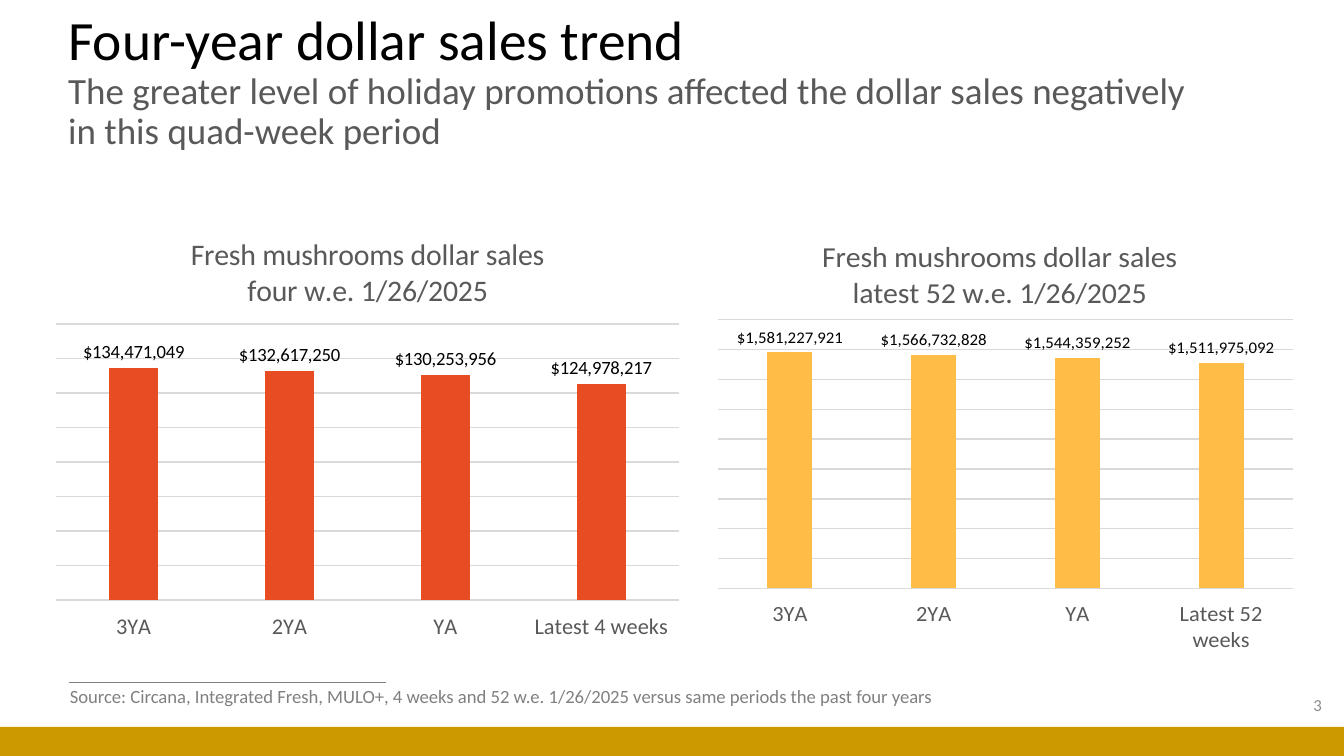
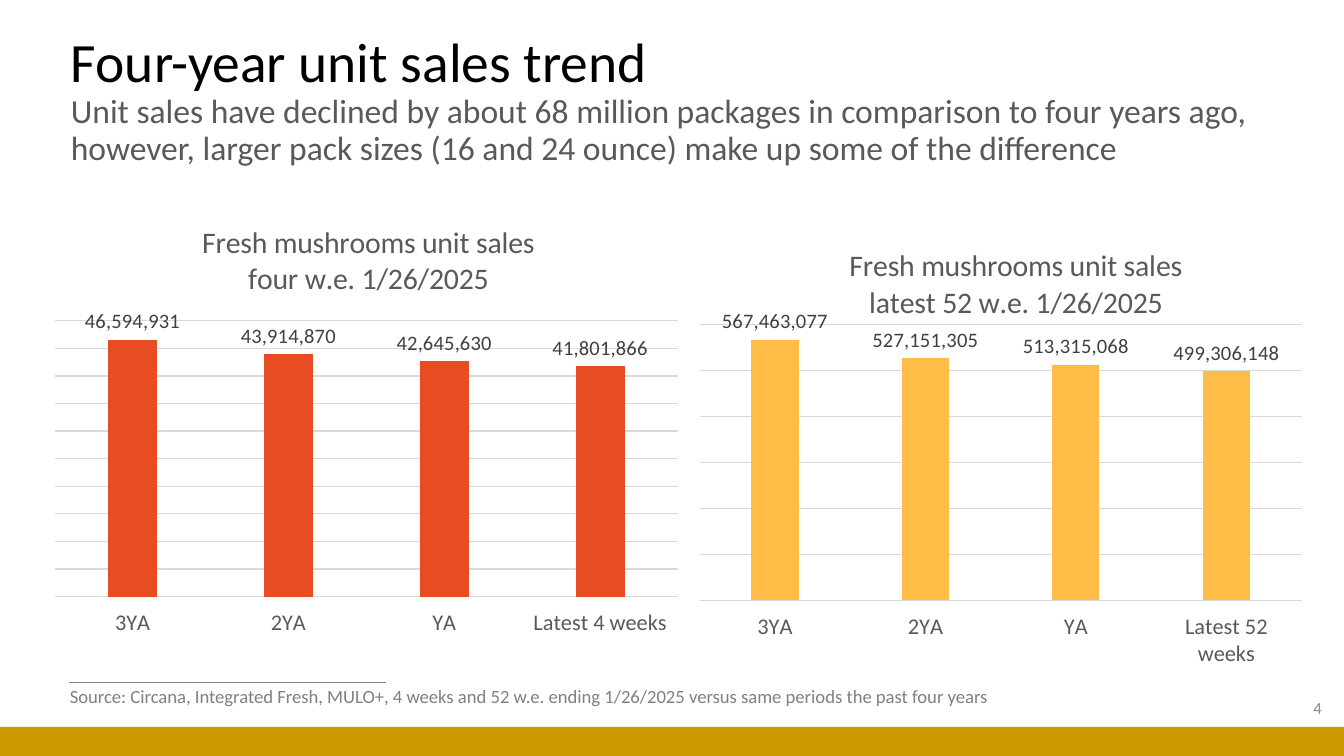
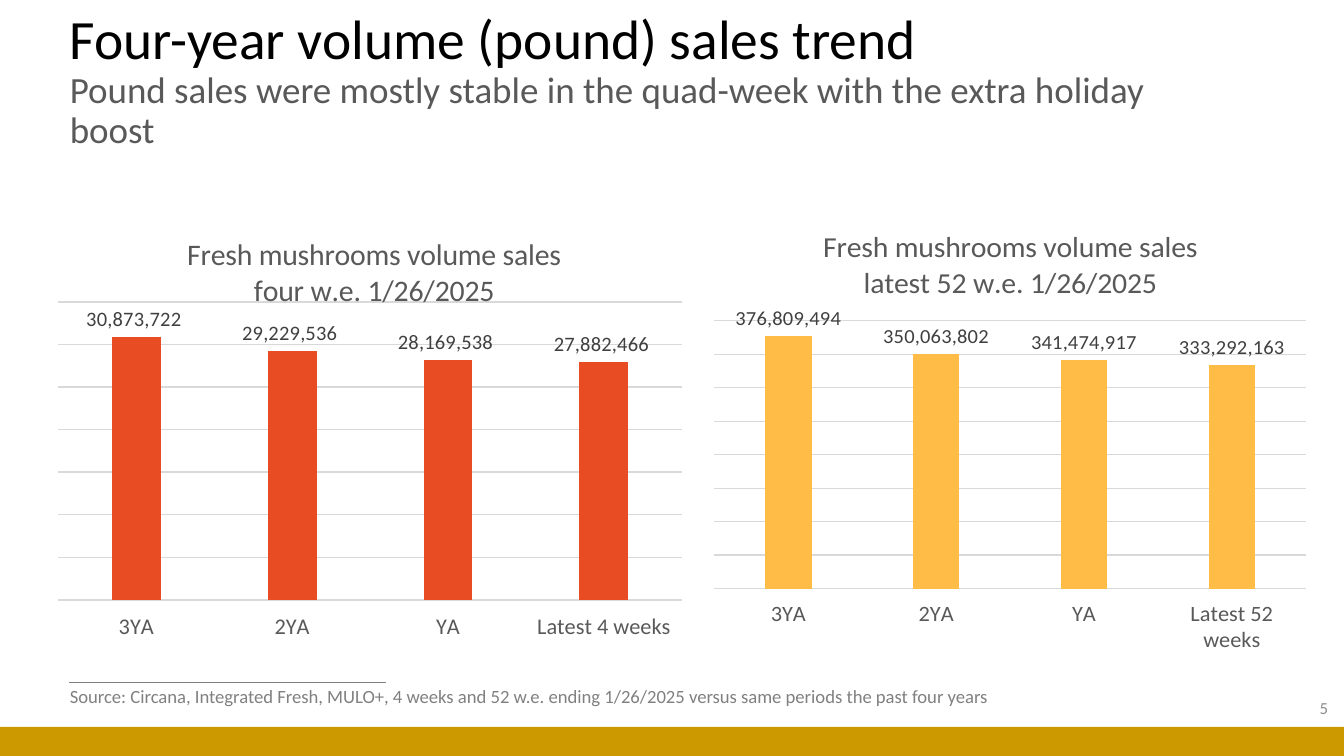
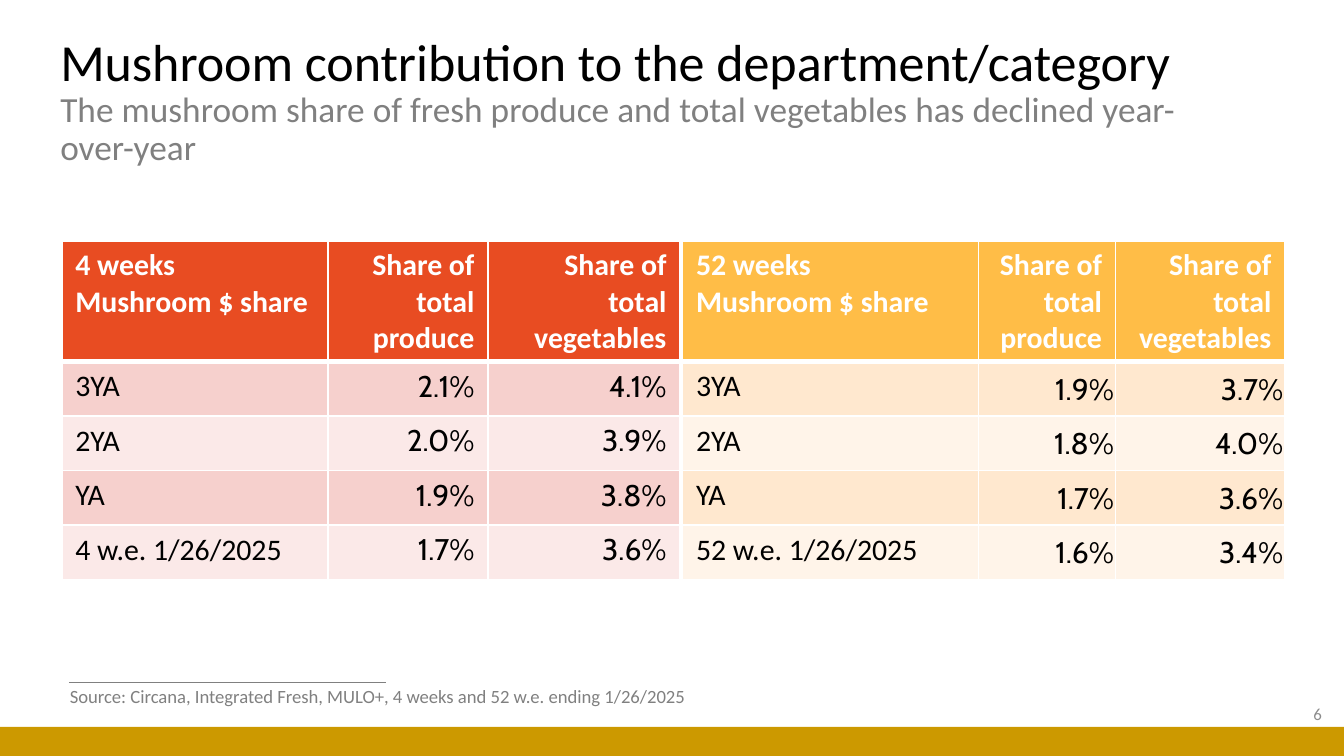
"""Build four slides on mushroom sales trends."""
from dataclasses import dataclass
from typing import Any, NamedTuple, Optional

from lxml import etree
from pptx import Presentation
from pptx.chart.data import CategoryChartData
from pptx.dml.color import RGBColor
from pptx.enum.chart import XL_CHART_TYPE, XL_LABEL_POSITION, XL_TICK_LABEL_POSITION, XL_TICK_MARK
from pptx.enum.shapes import MSO_CONNECTOR, MSO_SHAPE
from pptx.enum.text import MSO_ANCHOR, MSO_AUTO_SIZE, PP_ALIGN
from pptx.oxml.ns import qn
from pptx.util import Cm, Pt

COLUMN = XL_CHART_TYPE.COLUMN_CLUSTERED
OUTSIDE = XL_LABEL_POSITION.OUTSIDE_END
LOW = XL_TICK_LABEL_POSITION.LOW
NO_TICK = XL_TICK_MARK.NONE
STRAIGHT = MSO_CONNECTOR.STRAIGHT
RECT = MSO_SHAPE.RECTANGLE
TOP, MIDDLE = MSO_ANCHOR.TOP, MSO_ANCHOR.MIDDLE
LEFT, RIGHT = PP_ALIGN.LEFT, PP_ALIGN.RIGHT
FIT = MSO_AUTO_SIZE.SHAPE_TO_FIT_TEXT

BLACK = RGBColor(0x00, 0x00, 0x00)
WHITE = RGBColor(0xFF, 0xFF, 0xFF)
DARK = RGBColor(0x40, 0x40, 0x40)
SLATE = RGBColor(0x59, 0x59, 0x59)
GREY = RGBColor(0x80, 0x80, 0x80)
PALE = RGBColor(0x8C, 0x8C, 0x8C)
GRID = RGBColor(0xD9, 0xD9, 0xD9)
GOLD = RGBColor(0xCC, 0x99, 0x00)
RED = RGBColor(0xE8, 0x4C, 0x22)
RED_BANDS = (RGBColor(0xF6, 0xD0, 0xCD), RGBColor(0xFB, 0xE9, 0xE8))
AMBER = RGBColor(0xFF, 0xBD, 0x47)
AMBER_BANDS = (RGBColor(0xFF, 0xE8, 0xCF), RGBColor(0xFF, 0xF4, 0xE9))

BODY, DIGITS = "Calibri", "Cabin"
DOLLAR, COUNT = "\\$#,##0", "#,##0"
SIGNED = "#,##0_);[Red]\\(#,##0\\)"
YEARS = ("3YA", "2YA", "YA")
FOUR = YEARS + ("Latest 4 weeks",)
FULL = YEARS + ("Latest 52 weeks",)
SOURCE = "Source: Circana, Integrated Fresh, MULO+, 4 weeks and 52 w.e. "
PAST = "1/26/2025 versus same periods the past four years"


class Box(NamedTuple):
    """Left, top, width and height in centimetres."""
    left: float
    top: float
    width: float
    height: float

    def cm(self) -> list[Cm]:
        """Return the four lengths."""
        return [Cm(size) for size in self]


class Face(NamedTuple):
    """Size, colour, typeface and weight of some text."""
    size: float
    color: RGBColor
    name: str = BODY
    bold: bool = False


@dataclass
class Bars:
    """One column chart."""
    box: Box
    title: str
    cats: tuple[str, ...]
    vals: tuple[int, ...]
    color: RGBColor
    plot: tuple[float, ...]
    label: Face = Face(11, DARK)
    code: str = COUNT
    head: Optional[tuple[float, float]] = None


@dataclass
class Grid:
    """One table of shares."""
    left: float
    cols: tuple[float, ...]
    span: str
    rows: tuple[tuple[str, ...], ...]
    color: RGBColor
    bands: tuple[RGBColor, RGBColor]
    tight: bool = False


@dataclass
class Page:
    """One slide with its title, footer and content."""
    number: int
    title: str
    lead: str
    box: Box
    sizes: tuple[float, float]
    source: str
    width: float
    mark: tuple[float, float]
    blocks: tuple[Any, ...]
    tone: RGBColor = SLATE


def assign(thing: Any, **values: Any) -> None:
    """Set each named value on an object."""
    for name, value in values.items():
        setattr(thing, name, value)


def paint(font: Any, face: Face) -> None:
    """Apply a face to a font."""
    assign(font, size=Pt(face.size), name=face.name, bold=face.bold)
    font.color.rgb = face.color


def write(slide: Any, box: Box, runs: list[tuple[str, Face]], align: Any = LEFT,
          space: Optional[float] = None, **frame: Any) -> None:
    """Add a text box whose runs stand on lines of their own."""
    text = slide.shapes.add_textbox(*box.cm()).text_frame
    assign(text, **{"word_wrap": True, "vertical_anchor": MIDDLE, **frame})
    para = text.paragraphs[0]
    assign(para, alignment=align, line_spacing=space)
    for order, (words, face) in enumerate(runs):
        if order:
            para.add_line_break()
        run = para.add_run()
        run.text = words
        paint(run.font, face)


def place(parent: Any, **values: Any) -> None:
    """Give a piece of a chart a layout by hand."""
    layout = parent.find(qn("c:layout"))
    if layout is None:
        layout = etree.Element(qn("c:layout"))
        parent.insert(0, layout)
    manual = etree.SubElement(layout, qn("c:manualLayout"))
    for name, value in values.items():
        etree.SubElement(manual, qn(f"c:{name}")).set("val", str(value))


def draw_bars(slide: Any, bars: Bars) -> None:
    """Add a column chart."""
    data = CategoryChartData(number_format=bars.code)
    data.categories = bars.cats
    data.add_series("Series 1", bars.vals)
    chart = slide.shapes.add_chart(COLUMN, *bars.box.cm(), data).chart
    chart.has_legend = False
    paint(chart.font, Face(10, BLACK))

    title = chart.chart_title
    title.text_frame.text = bars.title
    for para in title.text_frame.paragraphs:
        for run in para.runs:
            paint(run.font, Face(16, SLATE))
    if bars.head:
        x, y = bars.head
        place(title._element, xMode="edge", yMode="edge", x=x, y=y)
    x, y, w, h = bars.plot
    place(chart._chartSpace.chart.plotArea, layoutTarget="inner", xMode="edge",
          yMode="edge", x=x, y=y, w=w, h=h)

    cat, val = chart.category_axis, chart.value_axis
    assign(cat, major_tick_mark=NO_TICK, minor_tick_mark=NO_TICK, tick_label_position=LOW)
    paint(cat.tick_labels.font, Face(12, SLATE))
    assign(val, minimum_scale=0, has_major_gridlines=True, visible=False)
    assign(val.tick_labels, number_format=bars.code, number_format_is_linked=False)
    for line in (cat.format.line, val.major_gridlines.format.line):
        line.width = Pt(0.75)
        line.color.rgb = GRID

    plot = chart.plots[0]
    assign(plot, gap_width=219, overlap=-27, vary_by_categories=False, has_data_labels=True)
    assign(plot.data_labels, show_value=True, position=OUTSIDE,
           number_format=bars.code, number_format_is_linked=False)
    paint(plot.data_labels.font, bars.label)
    fill = plot.series[0].format.fill
    fill.solid()
    fill.fore_color.rgb = bars.color


def edge(cell: Any, **widths: float) -> None:
    """Give a cell white borders."""
    props = cell._tc.get_or_add_tcPr()
    for order, (side, width) in enumerate(widths.items()):
        line = etree.Element(qn(f"a:ln{side}"), w=str(Pt(width)))
        solid = etree.SubElement(line, qn("a:solidFill"))
        etree.SubElement(solid, qn("a:srgbClr")).set("val", str(WHITE))
        props.insert(order, line)


def draw_grid(slide: Any, grid: Grid) -> None:
    """Add a table of shares."""
    heads = (f"{grid.span} weeks\nMushroom $ share", "Share of total produce",
             "Share of total vegetables")
    rows = (heads,) + grid.rows
    box = Box(grid.left, 4.55, sum(grid.cols), 6.4)
    table = slide.shapes.add_table(len(rows), len(heads), *box.cm()).table
    table.horz_banding = False
    for col, width in zip(table.columns, grid.cols):
        col.width = Cm(width)
    for r, row in enumerate(rows):
        table.rows[r].height = Cm(1.03 if r else 2.28)
        for c, words in enumerate(row):
            cell = table.cell(r, c)
            cell.text = words
            cell.fill.solid()
            cell.fill.fore_color.rgb = grid.bands[(r - 1) % 2] if r else grid.color
            edge(cell, L=1, R=1, T=3 if r == 1 else 1, B=1 if r else 3)
            tight = grid.tight and r and c
            cell.vertical_anchor = MIDDLE if tight else TOP
            if tight:
                assign(cell, margin_left=Cm(0.03), margin_top=Cm(0.03),
                       margin_right=Cm(0.03), margin_bottom=0)
            face = Face(16, BLACK, DIGITS if c else BODY) if r else Face(16, WHITE, bold=True)
            for para in cell.text_frame.paragraphs:
                para.alignment = RIGHT if c else LEFT
                paint(para.runs[0].font, face)


def draw_base(slide: Any) -> None:
    """Add the footer rule and band."""
    rule = slide.shapes.add_connector(STRAIGHT, Cm(1.3), Cm(12.9), Cm(7.29), Cm(12.9))
    rule.line.width = Pt(0.5)
    rule.line.color.rgb = GREY
    etree.SubElement(rule._element.spPr, qn("a:effectLst"))
    band = slide.shapes.add_shape(RECT, *Box(0, 13.74, 25.4, 0.55).cm())
    band.shadow.inherit = False
    band.fill.solid()
    band.fill.fore_color.rgb = GOLD
    band.line.fill.background()


def draw_page(deck: Any, page: Page) -> None:
    """Add a slide."""
    slide = deck.slides.add_slide(deck.slide_layouts[6])
    draw_base(slide)
    big, small = page.sizes
    write(slide, page.box, [(page.title, Face(big, BLACK)), (page.lead, Face(small, page.tone))],
          space=0.9)
    write(slide, Box(*page.mark, 5.72, 0.76), [(str(page.number), Face(9, PALE))], RIGHT)
    write(slide, Box(1.07, 12.83, page.width, 0.69), [(page.source, Face(10, GREY))],
          word_wrap=False, auto_size=FIT, vertical_anchor=TOP)
    for block in page.blocks:
        DRAW[type(block)](slide, block)


DRAW = {Bars: draw_bars, Grid: draw_grid}

PAGES = (
    Page(3, "Four-year dollar sales trend",
         "The greater level of holiday promotions affected the dollar sales negatively "
         "in this quad-week period",
         Box(1.04, 0.56, 21.84, 2.01), (29.7, 19.8), SOURCE + PAST, 17.32, (19.51, 12.95), (
             Bars(Box(1.04, 3.94, 11.81, 8.41),
                  "Fresh mushrooms dollar sales\nfour w.e. 1/26/2025", FOUR,
                  (134471049, 132617250, 130253956, 124978217), RED,
                  (0, 0.26, 1, 0.62), Face(10, BLACK), DOLLAR, (0.21, 0.05)),
             Bars(Box(13.11, 4.14, 11.56, 8.2),
                  "Fresh mushrooms dollar sales\nlatest 52 w.e. 1/26/2025", FULL,
                  (1581227921, 1566732828, 1544359252, 1511975092), AMBER,
                  (0.04, 0.24, 0.94, 0.64), Face(9, BLACK), DOLLAR))),
    Page(4, "Four-year unit sales trend",
         "Unit sales have declined by about 68 million packages in comparison to four years "
         "ago, however, larger pack sizes (16 and 24 ounce) make up some of the difference",
         Box(1.09, 0.91, 23.01, 2.01), (29.7, 18), SOURCE + "ending " + PAST, 18.39,
         (19.51, 13), (
             Bars(Box(1.02, 3.71, 11.81, 8.41),
                  "Fresh mushrooms unit sales\nfour w.e. 1/26/2025", FOUR,
                  (46594931, 43914870, 42645630, 41801866), RED,
                  (0, 0.28, 1, 0.62), head=(0.23, 0.05)),
             Bars(Box(13.21, 4.14, 11.99, 8.69),
                  "Fresh mushrooms unit sales\nlatest 52 w.e. 1/26/2025", FULL,
                  (567463077, 527151305, 513315068, 499306148), AMBER,
                  (0, 0.23, 0.95, 0.6), head=(0.23, 0.05)))),
    Page(5, "Four-year volume (pound) sales trend",
         "Pound sales were mostly stable in the quad-week with the extra holiday boost",
         Box(1.07, 0.53, 21.84, 2.01), (29.7, 19.8), SOURCE + "ending " + PAST, 18.39,
         (19.63, 13), (
             Bars(Box(1.09, 3.94, 11.81, 8.41),
                  "Fresh mushrooms volume sales\nfour w.e. 1/26/2025", FOUR,
                  (30873722, 29229536, 28169538, 27882466), RED,
                  (0, 0.21, 1, 0.67), code=SIGNED, head=(0.2, 0.05)),
             Bars(Box(13.49, 3.94, 11.2, 8.41),
                  "Fresh mushrooms volume sales\nlatest 52 w.e. 1/26/2025", FULL,
                  (376809494, 350063802, 341474917, 333292163), AMBER,
                  (0, 0.26, 1, 0.62)))),
    Page(6, "Mushroom contribution to the department/category",
         "The mushroom share of fresh produce and total vegetables has declined year-over-year",
         Box(0.89, 1.3, 22.23, 1.27), (27.9, 18.9), SOURCE + "ending 1/26/2025", 12.57,
         (19.51, 13.11), (
             Grid(1.17, (5.03, 3.02, 3.63), "4",
                  (("3YA", "2.1%", "4.1%"), ("2YA", "2.0%", "3.9%"), ("YA", "1.9%", "3.8%"),
                   ("4 w.e. 1/26/2025", "1.7%", "3.6%")), RED, RED_BANDS),
             Grid(12.9, (5.59, 2.59, 3.2), "52",
                  (("3YA", "1.9%", "3.7%"), ("2YA", "1.8%", "4.0%"), ("YA", "1.7%", "3.6%"),
                   ("52 w.e. 1/26/2025", "1.6%", "3.4%")), AMBER, AMBER_BANDS, True)),
         GREY),
)


def main() -> None:
    """Build and save the deck."""
    deck = Presentation()
    assign(deck, slide_width=Cm(25.4), slide_height=Cm(14.29))
    for page in PAGES:
        draw_page(deck, page)
    deck.save("out.pptx")


if __name__ == "__main__":
    main()
